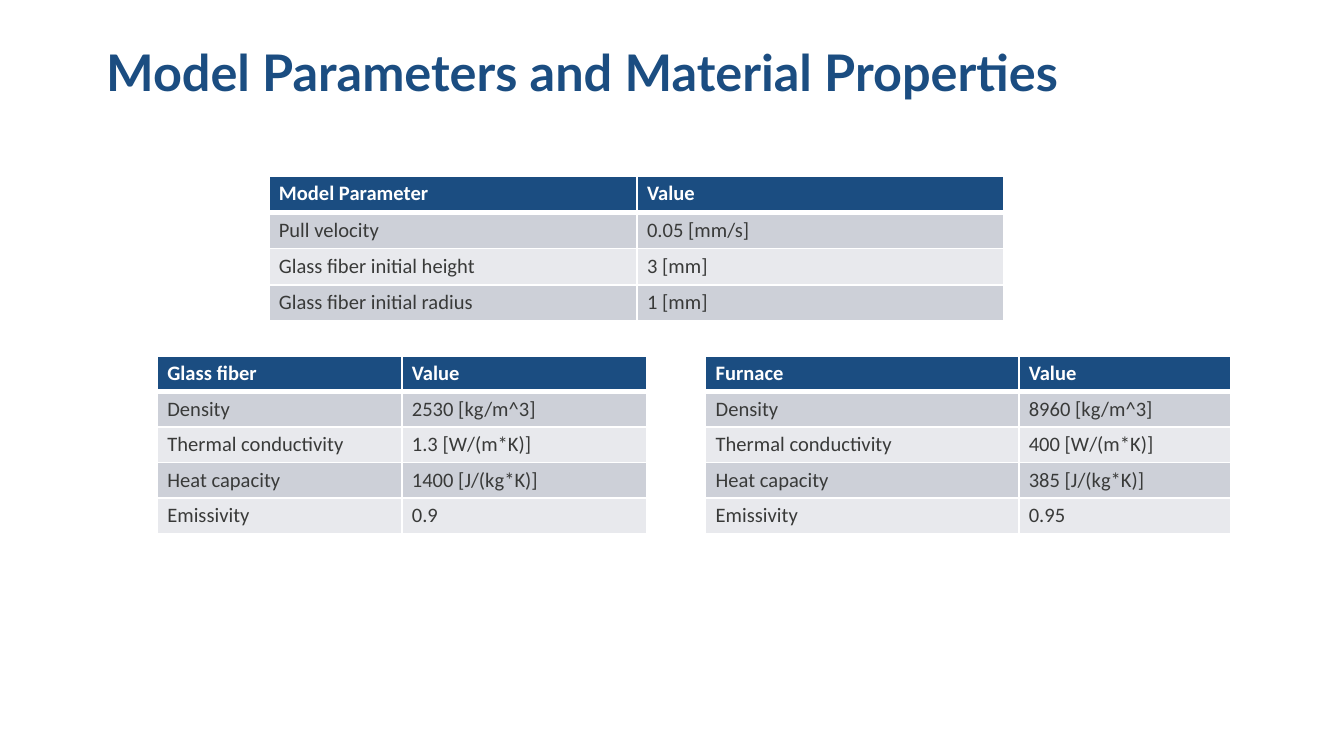
import pptx
import pptx.dml.color
import pptx.enum.text
import pptx.oxml
import pptx.oxml.ns
import pptx.util

Inches = pptx.util.Inches
NAVY, WHITE, CHARCOAL = "1B4D81", "FFFFFF", "393A39"
BANDS = ("CDD0D8", "E8E9ED")
HEADER_FONT = {"name": "Calibri", "size": pptx.util.Pt(11), "bold": True}
BODY_FONT = {**HEADER_FONT, "bold": False}
TITLE_FONT = {"name": "Lato", "size": pptx.util.Pt(27), "bold": True}
CELL_FORMAT = {
    "margin_left": pptx.util.Pt(5.4),
    "margin_right": pptx.util.Pt(5.4),
    "margin_top": pptx.util.Pt(2.7),
    "margin_bottom": pptx.util.Pt(2.7),
}
PROPERTIES = ("Density", "Thermal conductivity", "Heat capacity", "Emissivity")
TABLES = [
    {
        "box": (2, 1.31, 5.47, 1.08),
        "value_width": 2.73,
        "rows": [
            ("Model Parameter", "Value"),
            ("Pull velocity", "0.05 [mm/s]"),
            ("Glass fiber initial height", "3 [mm]"),
            ("Glass fiber initial radius", "1 [mm]"),
        ],
    },
    {
        "box": (1.17, 2.65, 3.64, 1.29),
        "value_width": 1.82,
        "rows": [
            ("Glass fiber", "Value"),
            *zip(PROPERTIES, ("2530 [kg/m^3]", "1.3 [W/(m*K)]", "1400 [J/(kg*K)]", "0.9")),
        ],
    },
    {
        "box": (5.25, 2.65, 3.91, 1.29),
        "value_width": 1.58,
        "rows": [
            ("Furnace", "Value"),
            *zip(PROPERTIES, ("8960 [kg/m^3]", "400 [W/(m*K)]", "385 [J/(kg*K)]", "0.95")),
        ],
    },
]


def color(value):
    """Turn a hex string into a colour."""
    return pptx.dml.color.RGBColor.from_string(value)


def apply_format(target, values):
    """Set each attribute named in a dict of format values."""
    for name, value in values.items():
        setattr(target, name, value)


def add_borders(cell, widths):
    """Draw white cell borders with the given widths in points."""
    properties = cell._tc.get_or_add_tcPr()
    for side, width in widths.items():
        properties.append(pptx.oxml.parse_xml(
            f'<a:ln{side} {pptx.oxml.ns.nsdecls("a")} w="{pptx.util.Pt(width)}">'
            f'<a:solidFill><a:srgbClr val="{WHITE}"/></a:solidFill></a:ln{side}>'
        ))


def fill_cell(cell, text, row_index):
    """Write and format one cell as part of the header or a banded row."""
    is_header = row_index == 0
    apply_format(cell, CELL_FORMAT)
    add_borders(cell, {
        "L": 1,
        "R": 1,
        "T": 3 if row_index == 1 else 1,
        "B": 3 if is_header else 1,
    })
    cell.fill.solid()
    cell.fill.fore_color.rgb = color(NAVY if is_header else BANDS[(row_index - 1) % 2])
    span = cell.text_frame.paragraphs[0].add_run()
    span.text = text
    apply_format(span.font, HEADER_FONT if is_header else BODY_FONT)
    span.font.color.rgb = color(WHITE if is_header else CHARCOAL)


def add_value_table(page, box, value_width, rows):
    """Place a two-column table of names and values in a box."""
    left, top, width, height = map(Inches, box)
    table = page.shapes.add_table(len(rows), 2, left, top, width, height).table
    table.horz_banding = False
    table.columns[1].width = Inches(value_width)
    table.columns[0].width = width - table.columns[1].width
    for row_index, texts in enumerate(rows):
        for column_index, text in enumerate(texts):
            fill_cell(table.cell(row_index, column_index), text, row_index)


def add_title(page, box, text):
    """Place the title in a box."""
    title = page.shapes.title
    apply_format(title, dict(zip(("left", "top", "width", "height"), map(Inches, box))))
    frame = title.text_frame
    frame.word_wrap = True
    frame.vertical_anchor = pptx.enum.text.MSO_ANCHOR.TOP
    para = frame.paragraphs[0]
    para.alignment = pptx.enum.text.PP_ALIGN.LEFT
    para.line_spacing = 0.9
    span = para.add_run()
    span.text = text
    apply_format(span.font, TITLE_FONT)
    span.font.color.rgb = color(NAVY)


def main():
    """Build and save the deck."""
    deck = pptx.Presentation()
    deck.slide_width = Inches(10)
    deck.slide_height = deck.slide_width * 9 // 16
    page = deck.slides.add_slide(deck.slide_layouts[5])
    add_title(page, (0.69, 0.31, 8.81, 0.81), "Model Parameters and Material Properties")
    for table in TABLES:
        add_value_table(page, **table)
    deck.save("out.pptx")


if __name__ == "__main__":
    main()
